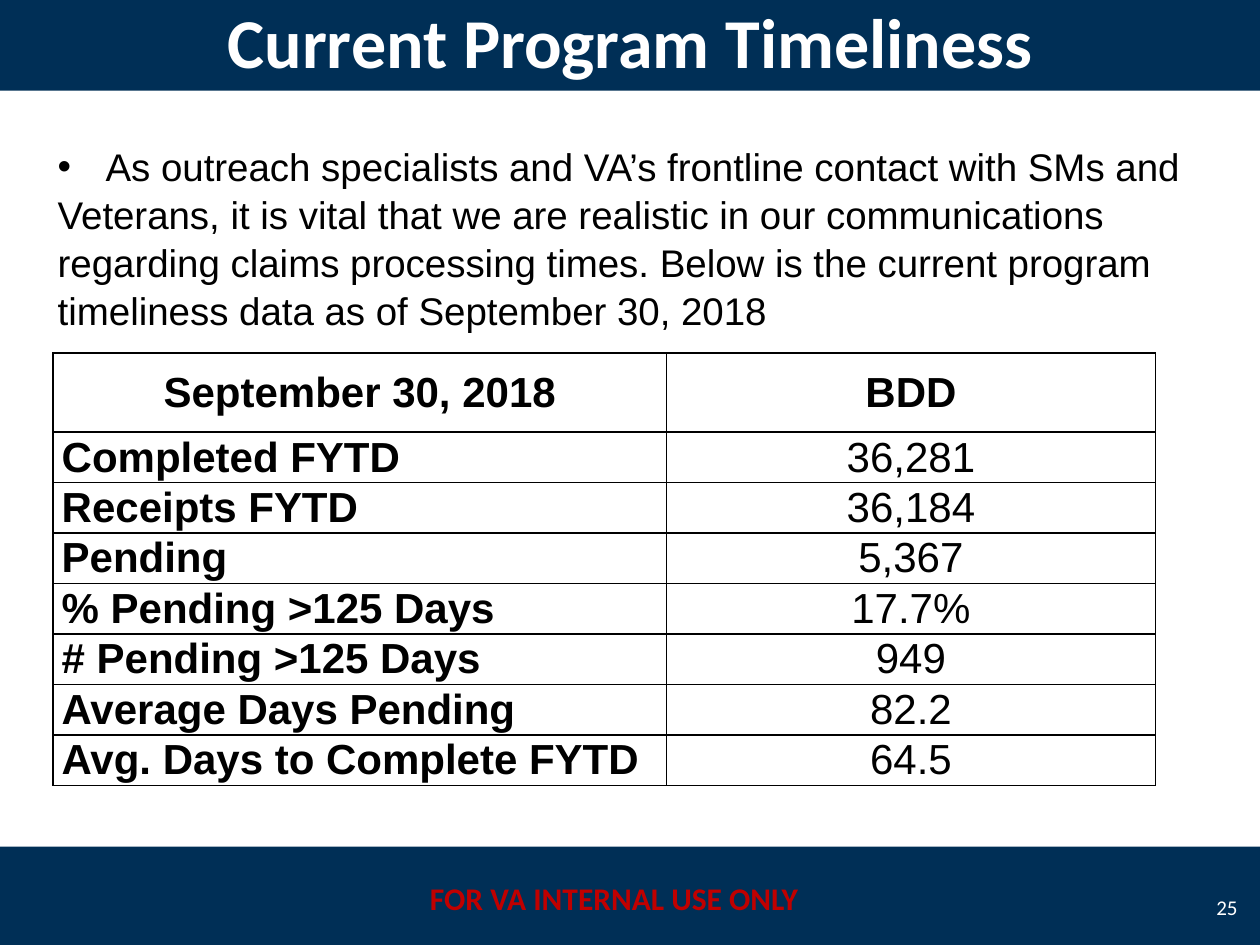
from lxml import etree
from pptx import Presentation
from pptx.dml.color import RGBColor
from pptx.enum import shapes, text
from pptx.oxml.ns import qn
from pptx.util import Inches, Pt

NAVY, WHITE, BLACK, RED = "002F56", "FFFFFF", "000000", "C00000"
LEFT, CENTER, RIGHT = text.PP_ALIGN.LEFT, text.PP_ALIGN.CENTER, text.PP_ALIGN.RIGHT
TOP, MIDDLE = text.MSO_ANCHOR.TOP, text.MSO_ANCHOR.MIDDLE


def color(hex_code):
    return RGBColor.from_string(hex_code)


def write(frame, words, size, font="Arial", ink=BLACK, bold=False,
          align=LEFT, anchor=TOP, bullet_indent=None, spacing=None):
    """Fill a text frame, one paragraph per line; bullet_indent bullets the first."""
    frame.word_wrap = True
    frame.vertical_anchor = anchor
    for index, line in enumerate(words.split("\n")):
        paragraph = frame.add_paragraph() if index else frame.paragraphs[0]
        paragraph.alignment = align
        paragraph.line_spacing = spacing
        if bullet_indent and index == 0:
            properties = paragraph._p.get_or_add_pPr()
            properties.set("marL", str(bullet_indent))
            properties.set("indent", str(-bullet_indent))
            etree.SubElement(properties, qn("a:buFont"), typeface="Arial")
            etree.SubElement(properties, qn("a:buChar"), char="•")
        run = paragraph.add_run()
        run.text = line
        run.font.name = font
        run.font.size = Pt(size)
        run.font.bold = bold
        run.font.color.rgb = color(ink)


presentation = Presentation()
presentation.slide_width = Inches(10)
presentation.slide_height = Inches(7.5)
slide = presentation.slides.add_slide(presentation.slide_layouts[6])

# Footer and title bands
for top in (6.72, -0.08):
    band = slide.shapes.add_shape(shapes.MSO_SHAPE.RECTANGLE,
                                  Inches(0), Inches(top), Inches(10), Inches(0.8))
    band.shadow.inherit = False
    band.fill.solid()
    band.fill.fore_color.rgb = color(NAVY)
    band.line.fill.background()

# Title, footer, page number and introduction
introduction = (
    "As outreach specialists and VA’s frontline contact with SMs and\n"
    "Veterans, it is vital that we are realistic in our communications regarding "
    "claims processing times. Below is the current program timeliness data as of "
    "September 30, 2018"
)
text_boxes = [
    ((3.25, 6.93, 3.25, 0.4), "FOR VA INTERNAL USE ONLY",
     dict(size=18, font="Calibri", ink=RED, bold=True, align=CENTER)),
    ((0, -0.08, 10, 0.8), "Current Program Timeliness",
     dict(size=40, font="Calibri", ink=WHITE, bold=True, align=CENTER, anchor=MIDDLE)),
    ((9.5, 7, 0.42, 0.4), "25",
     dict(size=12, font="Calibri", ink=WHITE, align=RIGHT, anchor=MIDDLE)),
    ((0.36, 1.07, 9.5, 1.58), introduction,
     dict(size=22, bullet_indent=Inches(0.38), spacing=1.04)),
]
for box, words, style in text_boxes:
    text_box = slide.shapes.add_textbox(*map(Inches, box))
    write(text_box.text_frame, words, **style)

# Timeliness table
rows = [
    ("September 30, 2018", "BDD"),
    ("Completed FYTD", "36,281"),
    ("Receipts FYTD", "36,184"),
    ("Pending", "5,367"),
    ("% Pending >125 Days", "17.7%"),
    ("# Pending >125 Days", "949"),
    ("Average Days Pending", "82.2"),
    ("Avg. Days to Complete FYTD", "64.5"),
]
table = slide.shapes.add_table(len(rows), 2, Inches(0.42), Inches(2.8),
                               Inches(8.75), Inches(3.43)).table
table.columns[0].width = Inches(4.87)
table.columns[1].width = Inches(3.88)
for row_index, row in enumerate(rows):
    is_header = row_index == 0
    table.rows[row_index].height = Inches(0.63 if is_header else 0.4)
    for column_index, words in enumerate(row):
        is_label = column_index == 0
        cell = table.cell(row_index, column_index)
        cell.margin_left = cell.margin_right = Inches(0.07)
        cell.margin_top = cell.margin_bottom = 0
        cell.vertical_anchor = MIDDLE
        write(cell.text_frame, words, size=24, bold=is_header or is_label,
              align=LEFT if is_label and not is_header else CENTER, anchor=None)
        properties = cell._tc.get_or_add_tcPr()
        for side in ("a:lnL", "a:lnR", "a:lnT", "a:lnB"):
            border = etree.SubElement(properties, qn(side), w=str(Pt(1)))
            border_fill = etree.SubElement(border, qn("a:solidFill"))
            etree.SubElement(border_fill, qn("a:srgbClr"), val=BLACK)
        cell.fill.background()

presentation.save("out.pptx")
